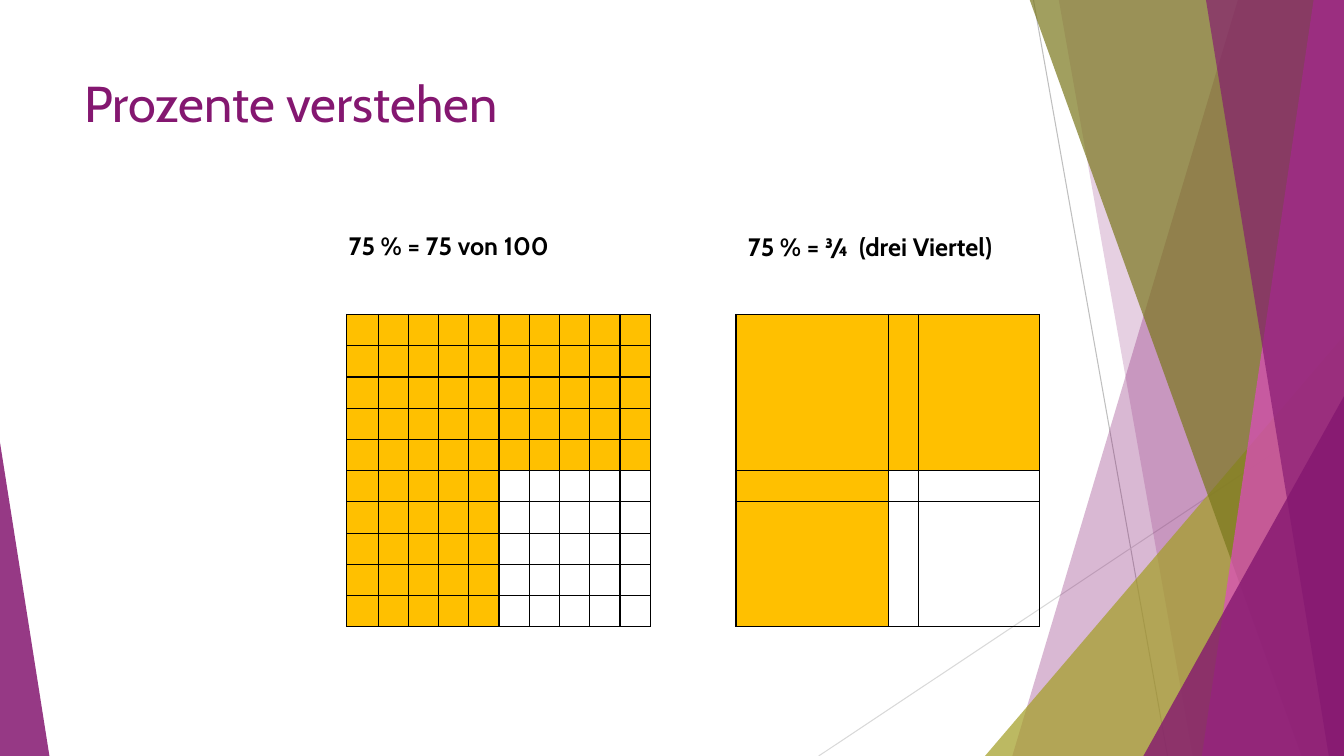
from lxml import etree
from pptx import Presentation
from pptx.dml.color import RGBColor
from pptx.enum.shapes import MSO_CONNECTOR, MSO_SHAPE
from pptx.oxml.ns import qn
from pptx.util import Inches, Pt

PURPLE = RGBColor(0x84, 0x17, 0x70)
PINK = RGBColor(0xDF, 0x4A, 0xC4)
OLIVE = RGBColor(0xA3, 0x9E, 0x26)
DARK_OLIVE = RGBColor(0x7A, 0x77, 0x1C)
GREY = RGBColor(0xBF, 0xBF, 0xBF)
LIGHT_GREY = RGBColor(0xD9, 0xD9, 0xD9)
AMBER = RGBColor(0xFF, 0xC0, 0x00)
BLACK = RGBColor(0, 0, 0)
NO_STYLE = "{2D5ABB26-0587-4C30-8999-92F81FD0307C}"
WIDTH, HEIGHT = 13.33, 7.5
GRID = 10
HALF = GRID // 2


def add_text(text, left, top, width, height, size=18, bold=False, color=BLACK):
    tf = s.shapes.add_textbox(Inches(left), Inches(top), Inches(width), Inches(height)).text_frame
    tf.word_wrap = True
    r = tf.paragraphs[0].add_run()
    r.text = text
    r.font.name = "Cabin"
    r.font.size = Pt(size)
    r.font.bold = bold
    r.font.color.rgb = color


def add_percent_grid(left, block):
    """Add a 10 x 10 table, three quarters filled, ruled around every block x block cells."""
    table = s.shapes.add_table(GRID, GRID, Inches(left), Inches(3.12), Inches(3.01), Inches(3.1)).table
    table.first_row = table.horz_banding = False
    table._tbl.tblPr.find(qn("a:tableStyleId")).text = NO_STYLE
    for i in range(GRID):
        table.columns[i].width = Inches(0.3 if i else 0.31)
        table.rows[i].height = Inches(0.31)
    for row in range(GRID):
        for col in range(GRID):
            cell = table.cell(row, col)
            cell.margin_left = cell.margin_right = cell.margin_top = cell.margin_bottom = 0
            end = etree.SubElement(cell.text_frame.paragraphs[0]._p, qn("a:endParaRPr"))
            end.set("sz", "800")
            ruled = {
                "lnL": col % block == 0,
                "lnR": (col + 1) % block == 0,
                "lnT": row % block == 0,
                "lnB": (row + 1) % block == 0,
            }
            tc_pr = cell._tc.get_or_add_tcPr()
            for side, visible in ruled.items():
                if visible:
                    ln = etree.SubElement(tc_pr, qn(f"a:{side}"), w=str(Pt(1)))
                    fill = etree.SubElement(ln, qn("a:solidFill"))
                    etree.SubElement(fill, qn("a:srgbClr"), val=str(BLACK))
            if row < HALF or col < HALF:
                cell.fill.solid()
                cell.fill.fore_color.rgb = AMBER
            else:
                cell.fill.background()


prs = Presentation()
prs.slide_width, prs.slide_height = Inches(WIDTH), Inches(HEIGHT)
s = prs.slides.add_slide(prs.slide_layouts[6])

# Thin background lines
for x1, y1, x2, y2, color in [
    (10.25, 0, 11.58, HEIGHT, GREY),
    (WIDTH, 4.03, 8.12, HEIGHT, LIGHT_GREY),
]:
    line = s.shapes.add_connector(
        MSO_CONNECTOR.STRAIGHT, Inches(x1), Inches(y1), Inches(x2), Inches(y2))
    line.line.color.rgb = color
    line.line.width = Pt(0.75)
    etree.SubElement(line._element.spPr, qn("a:effectLst"))

# Facets from back to front: a ribbon has (top x, bottom x),
# a triangle has (left, top, width, apex); both reach the slide's lower edge
facets = [
    ((12.28, 10.04), PURPLE, 30),
    ((10.5, 11.83), PURPLE, 20),
    ((9.77, 3.33, 3.56, 1), OLIVE, 72),
    ((10.21, 12.91), DARK_OLIVE, 70),
    ((13.03, 11.92), PINK, 70),
    ((11.96, 13.18), PURPLE, 65),
    ((11.34, 3.93, 1.99, 1), PURPLE, 80),
    ((0, 4.39, 0.49, 0), PURPLE, 85),
]
for geometry, color, opacity in facets:
    if len(geometry) == 2:
        top_x, bottom_x = geometry
        ribbon = s.shapes.build_freeform(Inches(top_x), Inches(-0.01))
        corners = [(WIDTH, -0.01), (WIDTH, HEIGHT), (bottom_x, HEIGHT)]
        ribbon.add_line_segments([(Inches(x), Inches(y)) for x, y in corners], close=True)
        sp = ribbon.convert_to_shape()
    else:
        left, top, width, apex = geometry
        sp = s.shapes.add_shape(
            MSO_SHAPE.ISOSCELES_TRIANGLE,
            Inches(left), Inches(top), Inches(width), Inches(HEIGHT - top))
        sp.adjustments[0] = apex
    sp.shadow.inherit = False
    sp.line.fill.background()
    sp.fill.solid()
    sp.fill.fore_color.rgb = color
    rgb = sp._element.spPr.find(qn("a:solidFill")).find(qn("a:srgbClr"))
    etree.SubElement(rgb, qn("a:alpha"), val=str(opacity * 1000))

add_text("Prozente verstehen", 0.74, 0.67, 9.4, 1.44, size=36, color=PURPLE)
add_percent_grid(3.44, block=1)
add_text("75 % = 75 von 100", 3.36, 2.24, 2.81, 0.4, bold=True)
add_percent_grid(7.3, block=HALF)
add_text("75 % = ¾  (drei Viertel)", 7.32, 2.25, 3.37, 0.4, bold=True)

prs.save("out.pptx")
